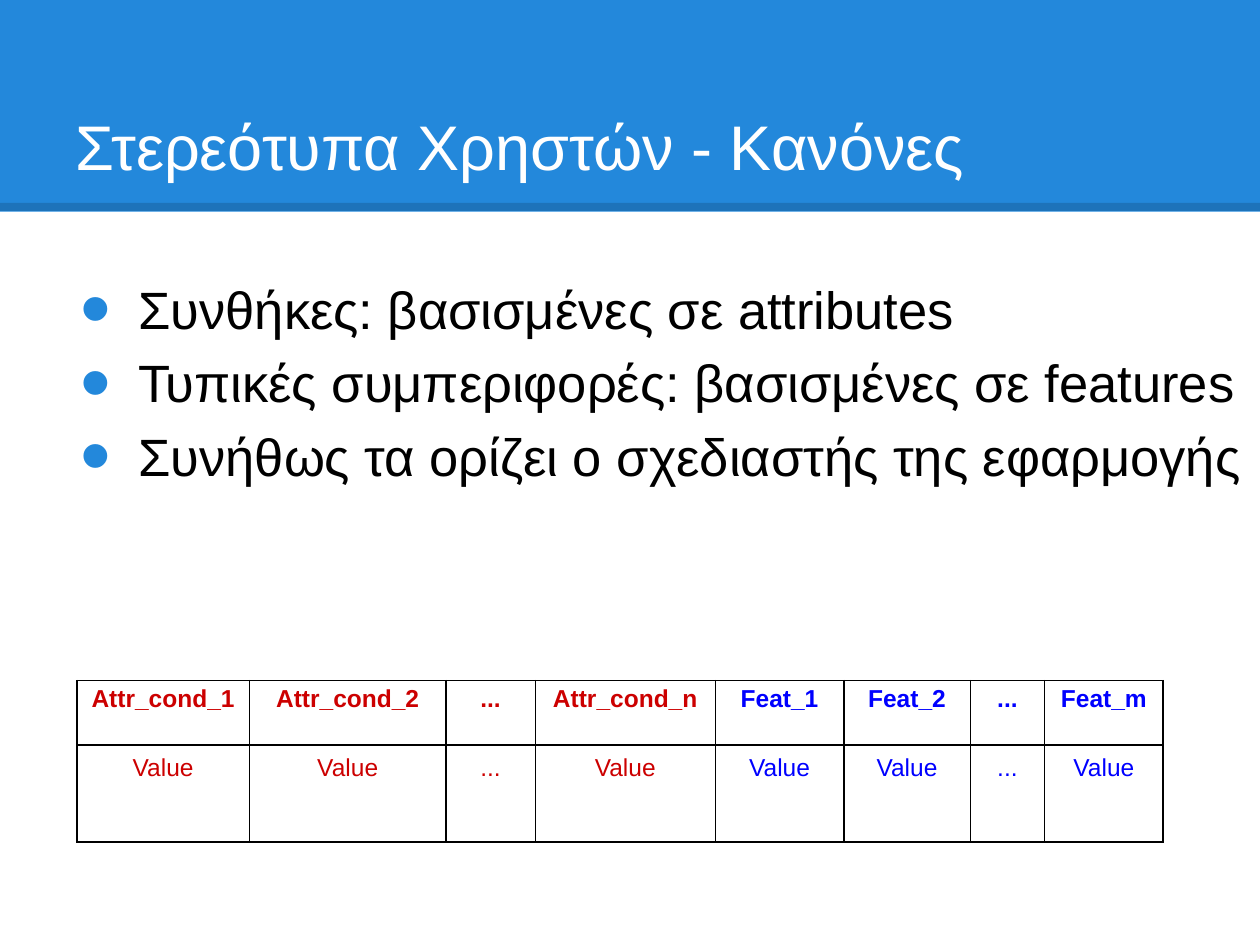
from dataclasses import dataclass

import pptx
import pptx.dml.color
import pptx.enum.shapes
import pptx.enum.text
import pptx.oxml
import pptx.oxml.ns
import pptx.util
from lxml import etree
from pptx.util import Cm

COLORS = {
    "banner": "2388DB",
    "black": "000000",
    "white": "FFFFFF",
    "attribute": "CC0000",
    "feature": "0000FF",
}
FONT = "Arial"
CENTER = pptx.enum.text.PP_ALIGN.CENTER


@dataclass
class Column:
    header: str
    value: str
    width: float  # cm
    color: str


TITLE = "Στερεότυπα Χρηστών - Κανόνες"
BULLETS = [
    "Συνθήκες: βασισμένες σε attributes",
    "Τυπικές συμπεριφορές: βασισμένες σε features",
    "Συνήθως τα ορίζει ο σχεδιαστής της εφαρμογής",
]
COLUMNS = [
    Column("Attr_cond_1", "Value", 3.48, "attribute"),
    Column("Attr_cond_2", "Value", 3.96, "attribute"),
    Column("...", "...", 1.8, "attribute"),
    Column("Attr_cond_n", "Value", 3.63, "attribute"),
    Column("Feat_1", "Value", 2.59, "feature"),
    Column("Feat_2", "Value", 2.55, "feature"),
    Column("...", "...", 1.5, "feature"),
    Column("Feat_m", "Value", 2.39, "feature"),
]
ROW_HEIGHTS = [1.3, 1.95]  # cm


def rgb(name: str) -> pptx.dml.color.RGBColor:
    return pptx.dml.color.RGBColor.from_string(COLORS[name])


def add_element(parent, tag: str, **attributes: str):
    element = etree.SubElement(parent, pptx.oxml.ns.qn(tag))
    for name, value in attributes.items():
        element.set(name, value)
    return element


def write_text(para, text: str, *, size: float, color: str, bold: bool = False,
               align=None, line_spacing=None, space_before=None) -> None:
    para.alignment = align
    para.line_spacing = line_spacing
    if space_before is not None:
        para.space_before = pptx.util.Pt(space_before)
    span = para.add_run()
    span.text = text
    span.font.name = FONT
    span.font.size = pptx.util.Pt(size)
    span.font.bold = bold
    span.font.color.rgb = rgb(color)


def add_bullet(para) -> None:
    properties = para._p.get_or_add_pPr()
    properties.set("marL", str(Cm(1.27)))
    properties.set("indent", str(-Cm(1.17)))
    bullet_color = add_element(properties, "a:buClr")
    add_element(bullet_color, "a:srgbClr", val=COLORS["banner"])
    add_element(properties, "a:buSzPct", val="167000")
    add_element(properties, "a:buFont", typeface=FONT)
    add_element(properties, "a:buChar", char="•")


def add_text_frame(page, left: float, top: float, width: float, height: float, anchor):
    box = page.shapes.add_textbox(Cm(left), Cm(top), Cm(width), Cm(height))
    frame = box.text_frame
    frame.word_wrap = True
    frame.vertical_anchor = anchor
    frame.margin_left = frame.margin_right = Cm(0.25)
    frame.margin_top = frame.margin_bottom = Cm(0.25)
    return frame


def add_banner(page, width: int) -> None:
    banner = page.shapes.add_shape(
        pptx.enum.shapes.MSO_SHAPE.RECTANGLE, 0, 0, width, Cm(4.27))
    banner.shadow.inherit = False
    banner.fill.solid()
    banner.fill.fore_color.rgb = rgb("banner")
    banner.line.fill.background()

    # Translucent dark rule along the lower edge
    rule = page.shapes.add_connector(
        pptx.enum.shapes.MSO_CONNECTOR.STRAIGHT, 0, Cm(4.17), width, Cm(4.17))
    rule.line.width = pptx.util.Pt(4.5)
    rule.line.color.rgb = rgb("black")
    properties = rule._element.spPr
    shade = properties.find(".//" + pptx.oxml.ns.qn("a:srgbClr"))
    add_element(shade, "a:alpha", val="15000")
    add_element(properties, "a:effectLst")


def add_borders(cell) -> None:
    properties = cell._tc.get_or_add_tcPr()
    for position, side in enumerate(("a:lnL", "a:lnR", "a:lnT", "a:lnB")):
        border = add_element(properties, side, w=str(pptx.util.Pt(1)))
        fill = add_element(border, "a:solidFill")
        add_element(fill, "a:srgbClr", val=COLORS["black"])
        properties.insert(position, border)


def fill_cell(cell, text: str, **text_format) -> None:
    cell.margin_left = cell.margin_right = Cm(0.1)
    cell.margin_top = cell.margin_bottom = Cm(0.1)
    cell.fill.background()
    add_borders(cell)
    write_text(cell.text_frame.paragraphs[0], text, size=14, align=CENTER, **text_format)


def add_rule_table(page) -> None:
    total_width = sum(column.width for column in COLUMNS)
    table = page.shapes.add_table(
        len(ROW_HEIGHTS), len(COLUMNS), Cm(1.55), Cm(13.72),
        Cm(total_width), Cm(sum(ROW_HEIGHTS))).table
    table.first_row = False
    table.horz_banding = False
    for row, height in zip(table.rows, ROW_HEIGHTS):
        row.height = Cm(height)
    for index, column in enumerate(COLUMNS):
        table.columns[index].width = Cm(column.width)
        fill_cell(table.cell(0, index), column.header, color=column.color, bold=True)
        fill_cell(table.cell(1, index), column.value, color=column.color, line_spacing=1.15)


def main() -> None:
    deck = pptx.Presentation()
    deck.slide_width, deck.slide_height = Cm(25.4), Cm(19.05)
    page = deck.slides.add_slide(deck.slide_layouts[6])
    page.background.fill.solid()
    page.background.fill.fore_color.rgb = rgb("white")

    # Banner and title
    add_banner(page, deck.slide_width)
    title = add_text_frame(page, 1.27, 0.76, 22.86, 3.18,
                           pptx.enum.text.MSO_ANCHOR.BOTTOM)
    write_text(title.paragraphs[0], TITLE, size=36, color="white")

    # Bullet list
    body = add_text_frame(page, 1.27, 5.33, 24.1, 8.15,
                          pptx.enum.text.MSO_ANCHOR.TOP)
    for index, text in enumerate(BULLETS):
        para = body.add_paragraph() if index else body.paragraphs[0]
        write_text(para, text, size=30, color="black", space_before=6)
        add_bullet(para)

    # Conditions and features
    add_rule_table(page)
    deck.save("out.pptx")


if __name__ == "__main__":
    main()
